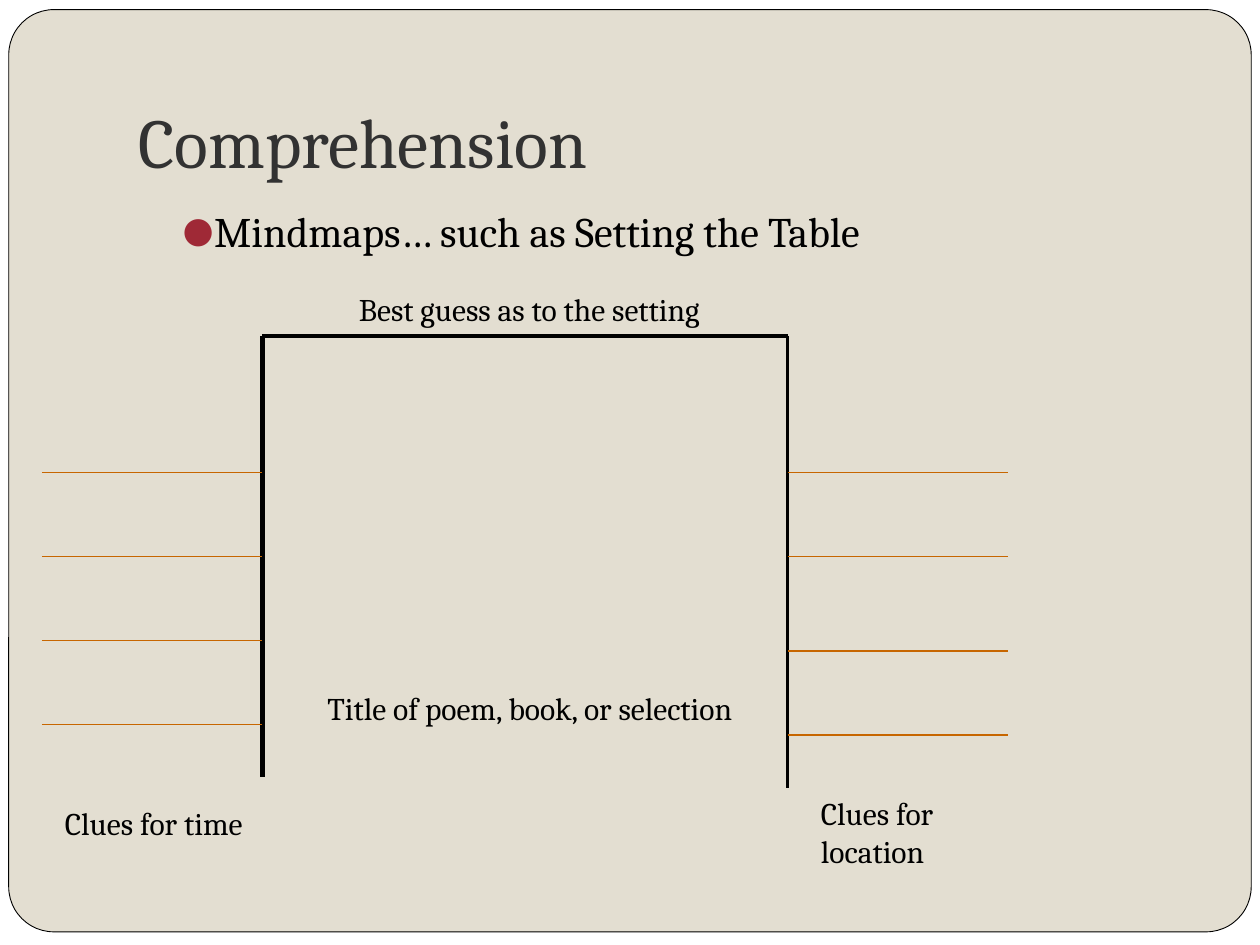
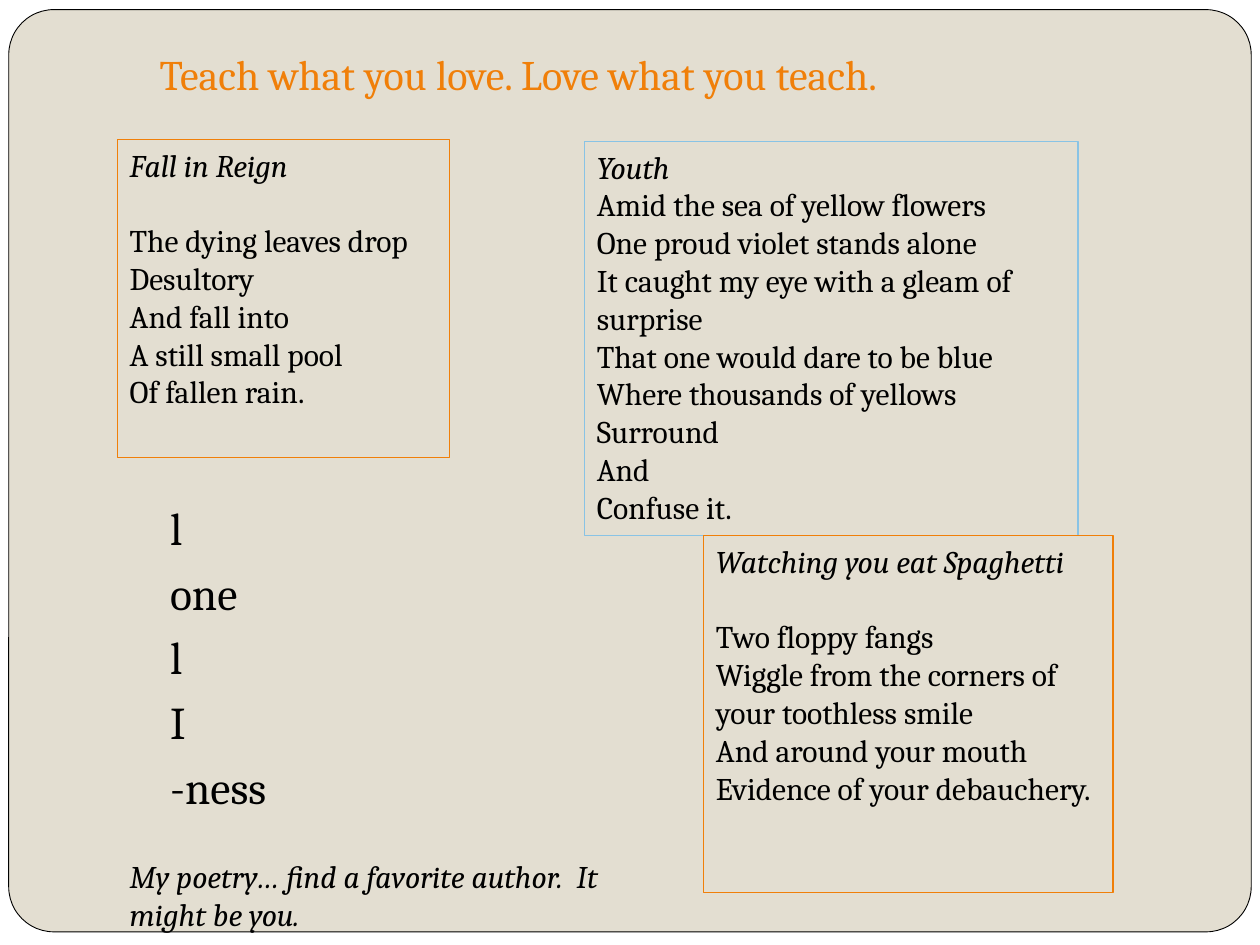
from collections import namedtuple
from dataclasses import dataclass

from lxml import etree
from pptx import Presentation
from pptx.dml.color import RGBColor
from pptx.enum.shapes import MSO_CONNECTOR, MSO_SHAPE
from pptx.enum.text import MSO_ANCHOR, MSO_AUTO_SIZE, PP_ALIGN
from pptx.oxml.ns import qn
from pptx.util import Pt

STRAIGHT = MSO_CONNECTOR.STRAIGHT
ROUNDED = MSO_SHAPE.ROUNDED_RECTANGLE
TOP, BOTTOM = MSO_ANCHOR.TOP, MSO_ANCHOR.BOTTOM
LEFT = PP_ALIGN.LEFT
FIXED_SIZE = MSO_AUTO_SIZE.NONE
TITLE_AND_CONTENT = 1

Box = namedtuple("Box", "left top width height")


@dataclass(frozen=True)
class Theme:
    """Colours, font and type sizes shared by the slides."""

    font: str = "Cambria"
    paper: str = "FFFFFF"
    panel: str = "E3DED1"
    ink: str = "000000"
    heading: str = "323232"
    orange: str = "F07F09"
    rust: str = "C76600"
    blue: str = "89C3E5"
    bullet: str = "9F2936"
    title_size: float = 40
    subtitle_size: float = 24
    verse_size: float = 26
    text_size: float = 18
    line_pitch: float = 21.6
    hairline: float = 0.75


THEME = Theme()


def set_all(target, values):
    """Set every attribute named in the dict of values."""
    for name, value in values.items():
        setattr(target, name, value)


def place(shape, box):
    """Move and size a shape to a box in points."""
    set_all(shape, {name: Pt(value) for name, value in box._asdict().items()})


def outline(shape, color, width=THEME.hairline):
    """Give a shape or connector a solid line."""
    shape.line.color.rgb = RGBColor.from_string(color)
    shape.line.width = Pt(width)


def write(shape, lines, size=THEME.text_size, color=THEME.ink, italic=False,
          anchor=TOP, space_before=0):
    """Fill a shape with one left-aligned paragraph per line."""
    frame = shape.text_frame
    set_all(frame, {"word_wrap": True, "auto_size": FIXED_SIZE, "vertical_anchor": anchor})
    frame.text = "\n".join(lines)
    for paragraph in frame.paragraphs:
        set_all(paragraph, {"alignment": LEFT, "space_before": Pt(space_before)})
        font = paragraph.runs[0].font
        set_all(font, {"name": THEME.font, "size": Pt(size), "italic": italic})
        font.color.rgb = RGBColor.from_string(color)
    return frame


def add_text(slide, box, lines, **style):
    """Add a text box at a box in points."""
    shape = slide.shapes.add_textbox(*map(Pt, box))
    write(shape, lines, **style)
    return shape


def add_line(slide, start, end, color, width):
    """Add a straight line between two points."""
    connector = slide.shapes.add_connector(STRAIGHT, *map(Pt, start + end))
    outline(connector, color, width)
    etree.SubElement(connector.element.spPr, qn("a:effectLst"))


def set_indent(paragraph, margin, indent):
    """Set the left margin and first-line indent and return the properties."""
    properties = paragraph._p.get_or_add_pPr()
    properties.set("marL", str(Pt(margin)))
    properties.set("indent", str(Pt(indent)))
    return properties


def add_bullet(paragraph):
    """Give a paragraph a coloured round bullet."""
    properties = set_indent(paragraph, 43.2, -18)
    color = etree.SubElement(properties, qn("a:buClr"))
    etree.SubElement(color, qn("a:srgbClr"), val=THEME.bullet)
    etree.SubElement(properties, qn("a:buSzPct"), val="85000")
    etree.SubElement(properties, qn("a:buFont"), typeface=THEME.font)
    etree.SubElement(properties, qn("a:buChar"), char="●")


def remove_bullet(paragraph):
    """Set a paragraph flush left without a bullet."""
    etree.SubElement(set_indent(paragraph, 0, 0), qn("a:buNone"))


def add_master_panel(presentation, slide, box):
    """Put the rounded panel on the master, behind every slide."""
    master = presentation.slide_master
    master.background.fill.solid()
    master.background.fill.fore_color.rgb = RGBColor.from_string(THEME.paper)
    panel = slide.shapes.add_shape(ROUNDED, *map(Pt, box))
    panel.adjustments[0] = 0.049
    panel.shadow.inherit = False
    panel.fill.solid()
    panel.fill.fore_color.rgb = RGBColor.from_string(THEME.panel)
    outline(panel, THEME.ink, 0.5)
    master.shapes.element.insert(2, panel.element)


def add_title(slide, box, text, **style):
    """Place and fill the title placeholder."""
    place(slide.shapes.title, box)
    write(slide.shapes.title, [text], **style)


def add_body(slide, box, lines, **style):
    """Place and fill the body placeholder."""
    body = slide.placeholders[1]
    place(body, box)
    write(body, lines, **style)
    return body


def add_table_map(slide, box):
    """Draw the table with its clue lines and labels."""
    left, top, width, height = box
    right = left + width
    rung = 126
    add_line(slide, (left, top), (left, top + height - 6), THEME.ink, 2.75)
    add_line(slide, (left, top), (right, top), THEME.ink, 2.25)
    add_line(slide, (right, top), (right, top + height), THEME.ink, 2.25)
    for start, lower_shift in ((left - rung, 0), (right, 6)):
        for index in range(4):
            y = top + 78 + 48 * index + lower_shift * (index // 2)
            add_line(slide, (start, y), (start + rung, y), THEME.rust, THEME.hairline)
    labels = (
        ("Clues for time", Box(left - 120, top + height + 6, 120, 51)),
        ("Clues for location", Box(right + 12, top + height, 120, 51)),
        ("Best guess as to the setting", Box(left + 48, top - 30, 229, 29)),
        ("Title of poem, book, or selection", Box(left + 30, top + 198, 270, 29)),
    )
    for text, label_box in labels:
        add_text(slide, label_box, [text])


def add_poem(slide, box, title, verses, color, title_gap=0):
    """Add a framed poem with an italic title."""
    frame = add_text(slide, box, [title, *verses])
    outline(frame, color)
    heading = frame.text_frame.paragraphs[0]
    heading.space_after = Pt(title_gap)
    heading.runs[0].font.italic = True


def build_comprehension(slide):
    """Build the mindmap slide."""
    add_title(slide, Box(72, 21.6, 612, 90), "Comprehension",
              size=THEME.title_size, color=THEME.heading, anchor=BOTTOM)
    slide.shapes.title.text_frame.margin_bottom = Pt(7.2)
    body = add_body(slide, Box(72, 113.76, 612, 360),
                    ["Mindmaps… such as Setting the Table"],
                    size=THEME.subtitle_size, space_before=3.7)
    paragraph = body.text_frame.paragraphs[0]
    paragraph.level = 1
    add_bullet(paragraph)
    add_table_map(slide, Box(150, 192, 300, 258))


def build_poetry(slide):
    """Build the slide of framed poems."""
    add_title(slide, Box(84, 24, 532, 36), "Teach what you love. Love what you teach.",
              size=THEME.subtitle_size, color=THEME.orange)
    body = add_body(slide, Box(90, 282, 102, 216), ["l", "one", "l", "I", "-ness"],
                    size=THEME.verse_size, space_before=5.8)
    outline(body, THEME.panel)
    for paragraph in body.text_frame.paragraphs:
        remove_bullet(paragraph)
    add_poem(slide, Box(334, 80.8, 282, 225.2), "Youth", [
        "Amid the sea of yellow flowers",
        "One proud violet stands alone",
        "It caught my eye with a gleam of surprise",
        "That one would dare to be blue",
        "Where thousands of yellows",
        "Surround",
        "And",
        "Confuse it.",
    ], THEME.blue)
    add_poem(slide, Box(402, 306, 234, 204), "Watching you eat Spaghetti", [
        "Two floppy fangs",
        "Wiggle from the corners of your toothless smile",
        "And around your mouth",
        "Evidence of your debauchery.",
    ], THEME.orange, THEME.line_pitch)
    add_poem(slide, Box(67, 79.7, 190, 181.6), "Fall in Reign", [
        "The dying leaves drop",
        "Desultory",
        "And fall into",
        "A still small pool",
        "Of fallen rain.",
    ], THEME.orange, THEME.line_pitch)
    add_text(slide, Box(67, 486, 311, 51),
             ["My poetry… find a favorite author.  It might be you."], italic=True)


def main():
    """Build and save the presentation."""
    presentation = Presentation()
    set_all(presentation, {"slide_width": Pt(720), "slide_height": Pt(540)})
    layout = presentation.slide_layouts[TITLE_AND_CONTENT]
    slides = [presentation.slides.add_slide(layout) for _ in range(2)]
    add_master_panel(presentation, slides[0], Box(5, 5.5, 710, 527))
    for slide, build in zip(slides, (build_comprehension, build_poetry)):
        build(slide)
    presentation.save("out.pptx")


if __name__ == "__main__":
    main()
